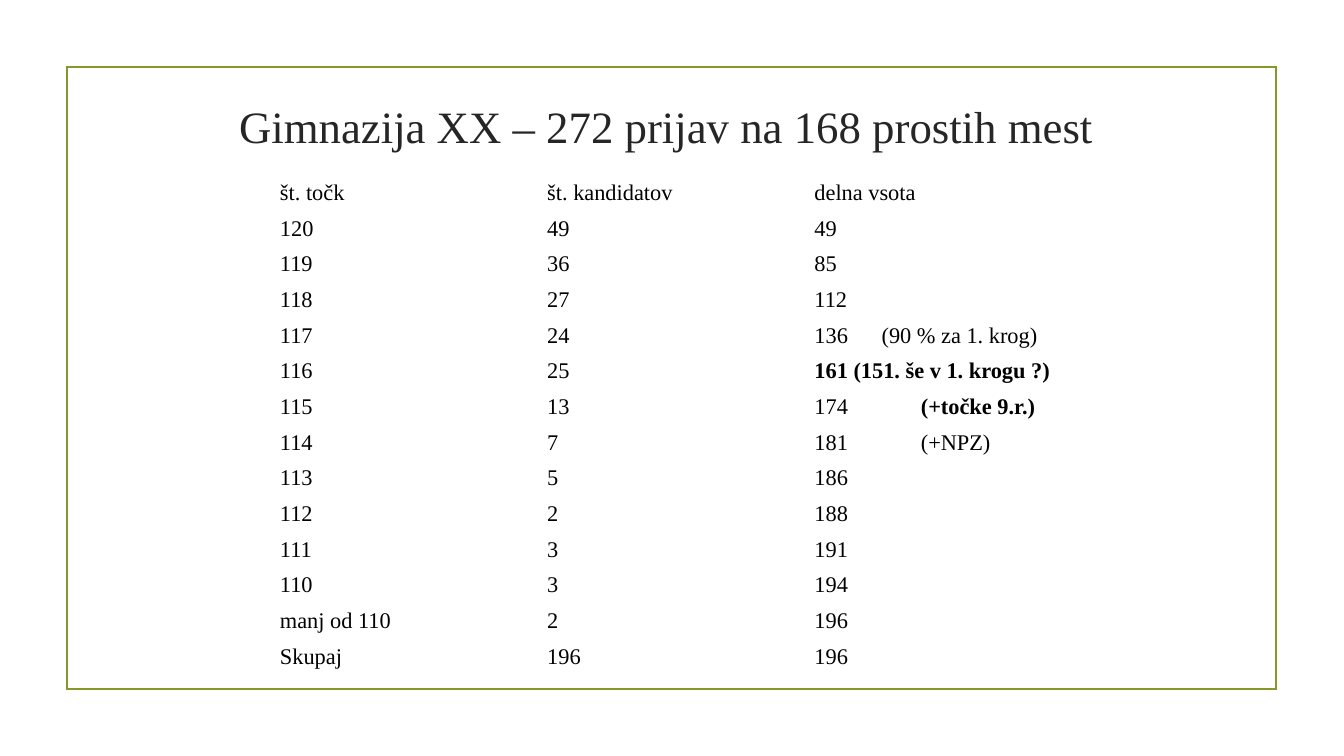
from lxml.etree import SubElement
from pptx import Presentation
from pptx.dml.color import RGBColor
from pptx.enum.shapes import MSO_SHAPE as Preset
from pptx.enum.text import MSO_ANCHOR as Anchor, MSO_AUTO_SIZE as AutoSize, PP_ALIGN as Align
from pptx.oxml.ns import qn
from pptx.util import Pt

FONT = "Times New Roman"
HEADINGS = ("št. točk", "št. kandidatov", "delna vsota")
CANDIDATES = {
    "120": 49, "119": 36, "118": 27, "117": 24, "116": 25, "115": 13, "114": 7,
    "113": 5, "112": 2, "111": 3, "110": 3, "manj od 110": 2,
}
NOTES = {
    "117": {"note": "\t(90 % za 1. krog)", "tab": 48},
    "116": {"note": " (151. še v 1. krogu ?)", "bold_sum": True, "bold_note": True},
    "115": {"note": "\t(+točke 9.r.)", "tab": 76, "bold_note": True},
    "114": {"note": "\t(+NPZ)", "tab": 76},
}


def color(value):
    """Turn a hex string into a colour."""
    return RGBColor.from_string(value)


def add_text(paragraph, text, size=16, fill="000000", bold=False):
    """Append a formatted run to a paragraph."""
    run = paragraph.add_run()
    run.text = text
    run.font.name = FONT
    run.font.size = Pt(size)
    run.font.bold = bold
    run.font.color.rgb = color(fill)


def add_tab(paragraph, position):
    """Set one left tab stop on a paragraph."""
    properties = paragraph._p.get_or_add_pPr()
    stops = SubElement(properties, qn("a:tabLst"))
    SubElement(stops, qn("a:tab"), pos=str(Pt(position)), algn="l")


def add_frame(slide, left, top, width, height):
    """Draw the green outline with sharp corners around the content."""
    frame = slide.shapes.add_shape(Preset.RECTANGLE, Pt(left), Pt(top), Pt(width), Pt(height))
    frame.shadow.inherit = False
    frame.fill.background()
    frame.line.color.rgb = color("83992A")
    frame.line.width = Pt(1.25)
    outline = frame._element.spPr.find(qn("a:ln"))
    SubElement(outline, qn("a:miter"), lim="800000")


def fill_title(slide, text, left, top, width, height):
    """Place and fill the title placeholder."""
    title = slide.shapes.title
    title.left, title.top, title.width, title.height = Pt(left), Pt(top), Pt(width), Pt(height)
    text_frame = title.text_frame
    text_frame.word_wrap = True
    text_frame.auto_size = AutoSize.NONE
    text_frame.vertical_anchor = Anchor.MIDDLE
    paragraph = text_frame.paragraphs[0]
    paragraph.alignment = Align.CENTER
    add_text(paragraph, text, size=32, fill="262626")


def fill_cell(cell, text, note="", tab=None, bold_sum=False, bold_note=False):
    """Write a value and its optional note into a white cell."""
    cell.fill.solid()
    cell.fill.fore_color.rgb = color("FFFFFF")
    cell.vertical_anchor = Anchor.MIDDLE
    cell.margin_left = cell.margin_right = Pt(6.5)
    cell.margin_top = cell.margin_bottom = Pt(3)
    paragraph = cell.text_frame.paragraphs[0]
    if tab:
        add_tab(paragraph, tab)
    add_text(paragraph, text, bold=bold_sum)
    if note:
        add_text(paragraph, note, bold=bold_note)


def score_rows():
    """List the table rows with running sums and a total."""
    rows, total = [HEADINGS], 0
    for points, count in CANDIDATES.items():
        total += count
        rows.append((points, str(count), str(total)))
    return rows + [("Skupaj", str(total), str(total))]


def add_scores(slide, left, top, width, height):
    """Add the table of points, candidates and running sums."""
    rows = score_rows()
    shape = slide.shapes.add_table(
        len(rows), len(HEADINGS), Pt(left), Pt(top), Pt(width), Pt(height))
    table = shape.table
    table.first_row = table.horz_banding = False
    for column in table.columns:
        column.width = Pt(width / len(HEADINGS))
    for row_index, values in enumerate(rows):
        table.rows[row_index].height = Pt(height / len(rows))
        points, count, running_sum = values
        fill_cell(table.cell(row_index, 0), points)
        fill_cell(table.cell(row_index, 1), count)
        fill_cell(table.cell(row_index, 2), running_sum, **NOTES.get(points, {}))


def main():
    """Build and save the presentation."""
    presentation = Presentation()
    presentation.slide_width, presentation.slide_height = Pt(960), Pt(540)
    slide = presentation.slides.add_slide(presentation.slide_layouts[5])
    add_frame(slide, 48, 48, 863.5, 444)
    fill_title(slide, "Gimnazija XX – 272 prijav na 168 prostih mest", 145, 62.5, 662, 54)
    add_scores(slide, 193.5, 125, 572.7, 357)
    presentation.save("out.pptx")


if __name__ == "__main__":
    main()
